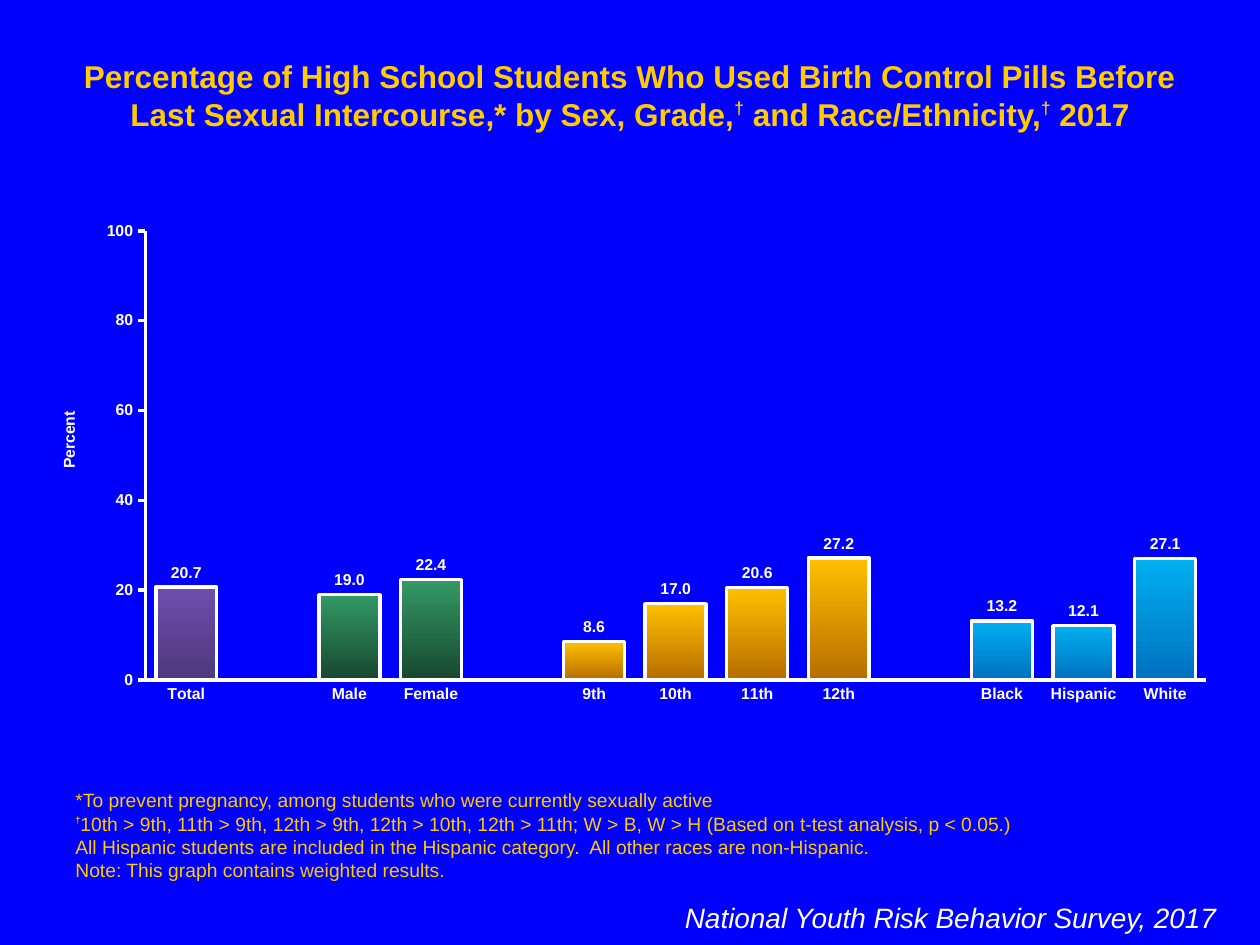
"""Builds a slide on birth control pill use among high school students."""
from dataclasses import dataclass

from lxml import etree
from pptx import Presentation
from pptx.chart.data import CategoryChartData
from pptx.dml.color import RGBColor
from pptx.enum.chart import XL_CHART_TYPE, XL_LABEL_POSITION, XL_TICK_MARK
from pptx.enum.text import MSO_ANCHOR, MSO_AUTO_SIZE, PP_ALIGN
from pptx.oxml.ns import qn
from pptx.util import Cm, Pt

COLUMNS = XL_CHART_TYPE.COLUMN_CLUSTERED
ABOVE_BAR = XL_LABEL_POSITION.OUTSIDE_END
NO_TICK, TICK_OUT = XL_TICK_MARK.NONE, XL_TICK_MARK.OUTSIDE
TOP, BOTTOM = MSO_ANCHOR.TOP, MSO_ANCHOR.BOTTOM
LEFT, CENTER, RIGHT = PP_ALIGN.LEFT, PP_ALIGN.CENTER, PP_ALIGN.RIGHT
GROW = MSO_AUTO_SIZE.SHAPE_TO_FIT_TEXT


@dataclass(frozen=True)
class Theme:
    font: str = "Arial"
    background: str = "0000FF"
    accent: str = "FFCC00"
    white: str = "FFFFFF"
    total: tuple = ("6E4EAE", "4F387C")
    sex: tuple = ("339966", "18472F")
    grade: tuple = ("FFC000", "B66D00")
    race: tuple = ("00B0F0", "0070C0")
    title_size: int = 18
    title_mark_size: int = 17
    note_size: int = 11
    note_mark_size: int = 9
    source_size: int = 16
    chart_size: int = 18
    label_size: int = 9
    line_width: int = 2


THEME = Theme()

BAR_GROUPS = [
    (THEME.total, [("Total", 20.7)]),
    (THEME.sex, [("Male", 19.0), ("Female", 22.4)]),
    (THEME.grade, [("9th", 8.6), ("10th", 17.0), ("11th", 20.6), ("12th", 27.2)]),
    (THEME.race, [("Black", 13.2), ("Hispanic", 12.1), ("White", 27.1)]),
]


def set_font(font, size, color, bold=False, italic=False):
    font.name = THEME.font
    font.size = Pt(size)
    font.bold = bold
    font.italic = italic
    font.color.rgb = RGBColor.from_string(color)


def add_text(paragraph, text, baseline=0, **style):
    run = paragraph.add_run()
    run.text = text
    set_font(run.font, **style)
    if baseline:
        run.font._element.set("baseline", str(baseline * 1000))


def place(parent, index, **fractions):
    for old in parent.findall(qn("c:layout")):
        parent.remove(old)
    layout = etree.Element(qn("c:layout"))
    manual = etree.SubElement(layout, qn("c:manualLayout"))
    if "w" in fractions:
        etree.SubElement(manual, qn("c:layoutTarget"), val="inner")
    for mode in ("xMode", "yMode"):
        etree.SubElement(manual, qn(f"c:{mode}"), val="edge")
    for key, fraction in fractions.items():
        etree.SubElement(manual, qn(f"c:{key}"), val=str(fraction))
    parent.insert(index, layout)


class SlideBuilder:
    def __init__(self, slide, theme):
        self.slide = slide
        self.theme = theme
        fill = slide.background.fill
        fill.solid()
        fill.fore_color.rgb = RGBColor.from_string(theme.background)

    def text(self, left, top, width, height, paragraphs, align=LEFT, anchor=TOP):
        box = self.slide.shapes.add_textbox(Cm(left), Cm(top), Cm(width), Cm(height))
        frame = box.text_frame
        frame.word_wrap = True
        frame.auto_size = GROW
        frame.vertical_anchor = anchor
        for number, pieces in enumerate(paragraphs):
            paragraph = frame.add_paragraph() if number else frame.paragraphs[0]
            paragraph.alignment = align
            for words, style in pieces:
                add_text(paragraph, words, **style)

    def line(self, line):
        line.color.rgb = RGBColor.from_string(self.theme.white)
        line.width = Pt(self.theme.line_width)

    def axis(self, axis, tick):
        axis.has_major_gridlines = False
        axis.major_tick_mark = tick
        axis.minor_tick_mark = NO_TICK
        self.line(axis.format.line)
        set_font(axis.tick_labels.font, self.theme.label_size, self.theme.white, bold=True)

    def axis_title(self, axis, words):
        title = axis.axis_title
        frame = title.text_frame
        add_text(frame.paragraphs[0], words, size=self.theme.label_size,
                 color=self.theme.white, bold=True)
        body = frame._txBody.find(qn("a:bodyPr"))
        body.set("rot", "-5400000")
        body.set("vert", "horz")
        place(title._element, 1, x=0.02, y=0.39)

    def bar(self, point, gradient):
        fill = point.format.fill
        fill.gradient()
        fill.gradient_angle = 270
        for stop, color in zip(fill.gradient_stops, gradient):
            stop.color.rgb = RGBColor.from_string(color)
        self.line(point.format.line)

    def column_chart(self, left, top, width, height, groups, value_title):
        bars = []
        for gradient, entries in groups:
            if bars:
                bars.append(("", None, None))
            bars += [(name, value, gradient) for name, value in entries]
        data = CategoryChartData()
        data.categories = [name for name, _, _ in bars]
        data.add_series("Series 1", [value for _, value, _ in bars])
        chart = self.slide.shapes.add_chart(
            COLUMNS, Cm(left), Cm(top), Cm(width), Cm(height), data).chart
        chart.has_title = False
        chart.has_legend = False
        set_font(chart.font, self.theme.chart_size, self.theme.white)

        plot = chart.plots[0]
        plot.vary_by_categories = False
        plot.gap_width = 34
        plot.overlap = 100
        for index, (_, _, gradient) in enumerate(bars):
            if gradient:
                self.bar(plot.series[0].points[index], gradient)
        plot.has_data_labels = True
        labels = plot.data_labels
        labels.show_value = True
        labels.number_format = "#,##0.0"
        labels.number_format_is_linked = False
        labels.position = ABOVE_BAR
        set_font(labels.font, self.theme.label_size, self.theme.white, bold=True)

        self.axis(chart.category_axis, NO_TICK)
        values = chart.value_axis
        self.axis(values, TICK_OUT)
        values.minimum_scale, values.maximum_scale, values.major_unit = 0, 100, 20
        self.axis_title(values, value_title)
        plot_area = chart._chartSpace.find(".//" + qn("c:plotArea"))
        place(plot_area, 0, x=0.095, y=0.036, w=0.886, h=0.896)


def main():
    deck = Presentation()
    deck.slide_width, deck.slide_height = Cm(25.4), Cm(19.05)
    builder = SlideBuilder(deck.slides.add_slide(deck.slide_layouts[6]), THEME)

    heading = dict(size=THEME.title_size, color=THEME.accent, bold=True)
    heading_mark = ("†", {**heading, "size": THEME.title_mark_size, "baseline": 40})
    note = dict(size=THEME.note_size, color=THEME.accent)
    note_mark = ("†", dict(size=THEME.note_mark_size, color=THEME.accent,
                           bold=True, baseline=50))
    source = dict(size=THEME.source_size, color=THEME.white, italic=True)

    builder.text(1.27, 1.02, 22.86, 1.02, [[
        ("Percentage of High School Students Who Used Birth Control Pills Before "
         "Last Sexual Intercourse,* by Sex, Grade,", heading),
        heading_mark, (" and Race/Ethnicity,", heading), heading_mark, (" 2017", heading),
    ]], align=CENTER)
    builder.text(1.27, 17.15, 22.86, 0.74, [
        [("*To prevent pregnancy, among students who were currently sexually active", note)],
        [note_mark, ("10th > 9th, 11th > 9th, 12th > 9th, 12th > 10th, 12th > 11th; "
                     "W > B, W > H (Based on t-test analysis, p < 0.05.)", note)],
        [("All Hispanic students are included in the Hispanic category.  "
          "All other races are non-Hispanic.", note)],
        [("Note: This graph contains weighted results.", note)],
    ], anchor=BOTTOM)
    builder.text(10.8, 18.03, 13.97, 1.63,
                 [[("National Youth Risk Behavior Survey, 2017", source)]], align=RIGHT)
    builder.column_chart(0.64, 4.29, 24.13, 10.11, BAR_GROUPS, "Percent")
    deck.save("out.pptx")


if __name__ == "__main__":
    main()
